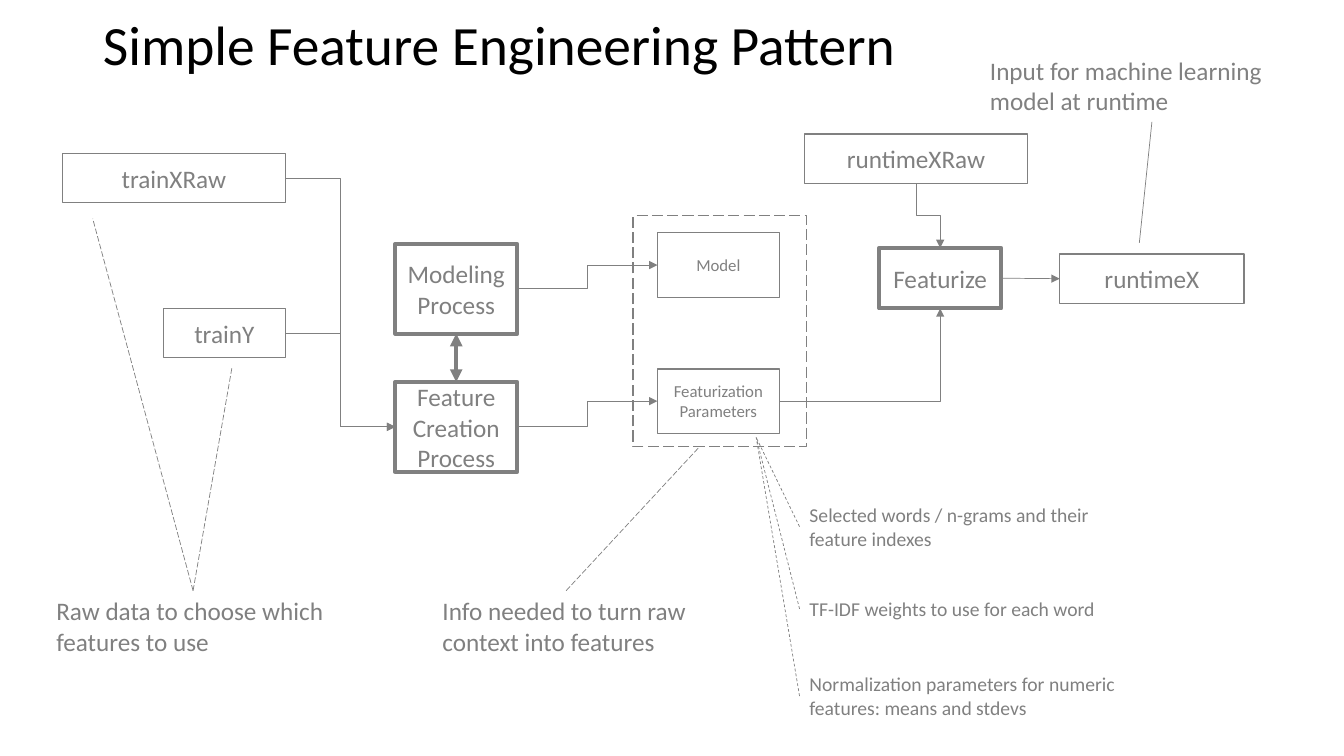
from lxml import etree
from pptx import Presentation
from pptx.dml.color import RGBColor
from pptx.enum.dml import MSO_LINE
from pptx.enum.shapes import MSO_CONNECTOR, MSO_SHAPE
from pptx.enum.text import MSO_ANCHOR, MSO_AUTO_SIZE, PP_ALIGN
from pptx.oxml.ns import qn
from pptx.util import Inches, Pt

GRAY, BLACK = "808080", "000000"
RECT = MSO_SHAPE.RECTANGLE
BENT, LINE = MSO_CONNECTOR.ELBOW, MSO_CONNECTOR.STRAIGHT
DASH, LONG = MSO_LINE.DASH, MSO_LINE.LONG_DASH
MIDDLE, TOP_EDGE = MSO_ANCHOR.MIDDLE, MSO_ANCHOR.TOP
LEFT_TEXT, CENTER = PP_ALIGN.LEFT, PP_ALIGN.CENTER
FIXED, GROW = MSO_AUTO_SIZE.NONE, MSO_AUTO_SIZE.SHAPE_TO_FIT_TEXT
TOP, LEFT, BOTTOM, RIGHT = range(4)
STEP_W, DATA_W, DATA_H = 1.21, 2.21, 0.49


def color(code):
    """Turn a hex string into a color."""
    return RGBColor.from_string(code)


def write(shape, text, size=18, code=GRAY, align=CENTER, anchor=MIDDLE, fit=FIXED, space=None):
    """Put formatted text into a shape."""
    frame = shape.text_frame
    frame.text = text
    frame.word_wrap = True
    frame.auto_size = fit
    frame.vertical_anchor = anchor
    for para in frame.paragraphs:
        para.alignment = align
        para.line_spacing = space
        for run in para.runs:
            run.font.name = "Calibri"
            run.font.size = Pt(size)
            run.font.color.rgb = color(code)


def stroke(shape, width, dash=None):
    """Format the line of a shape or connector."""
    shape.line.color.rgb = color(GRAY)
    shape.line.width = Pt(width)
    if dash is not None:
        shape.line.dash_style = dash


def block(slide, box, text="", size=18, width=1, dash=None):
    """Draw an outlined rectangle with a centered label."""
    shape = slide.shapes.add_shape(RECT, *map(Inches, box))
    shape.shadow.inherit = False
    shape.fill.background()
    stroke(shape, width, dash)
    if text:
        write(shape, text, size)
    return shape


def note(slide, box, text, size=18):
    """Add a free text note."""
    shape = slide.shapes.add_textbox(*map(Inches, box))
    write(shape, text, size, align=LEFT_TEXT, anchor=TOP_EDGE, fit=GROW)
    return shape


def link(slide, kind, start, end, width=0.5, dash=None, tips=()):
    """Join two ends, each a point or a shape with its side."""
    wire = slide.shapes.add_connector(kind, 0, 0, 0, 0)
    if isinstance(start[0], (int, float)):
        wire.begin_x, wire.begin_y = map(Inches, start)
    else:
        wire.begin_connect(*start)
    if isinstance(end[0], (int, float)):
        wire.end_x, wire.end_y = map(Inches, end)
    else:
        wire.end_connect(*end)
    stroke(wire, width, dash)
    for tip in tips:
        etree.SubElement(wire.line._get_or_add_ln(), qn(f"a:{tip}"), type="triangle")
    etree.SubElement(wire._element.spPr, qn("a:effectLst"))
    return wire


def arrow(slide, start, end, kind=BENT):
    """Draw a thin arrow between two blocks."""
    return link(slide, kind, start, end, tips=("tailEnd",))


def drop(slide, start, end):
    """Draw an elbow arrow that leaves and arrives vertically."""
    wire = arrow(slide, start, end)
    wide, high = wire.width, wire.height
    left = wire.left + (wide - high) // 2
    top = wire.top + (high - wide) // 2
    wire.left, wire.top, wire.width, wire.height = left, top, high, wide
    form = wire._element.spPr.find(qn("a:xfrm"))
    form.set("rot", "16200000")
    form.set("flipH", "1")


def heading(slide, box):
    """Place the slide title."""
    title = slide.shapes.title
    title.left, title.top, title.width, title.height = map(Inches, box)
    write(title, "Simple Feature Engineering Pattern", 39.6, BLACK, LEFT_TEXT, space=0.9)


def train(slide, x, y):
    """Place the training data and return its two blocks."""
    raw = block(slide, (x, y, DATA_W, DATA_H), "trainXRaw")
    label = block(slide, (x + DATA_W - STEP_W, y + 1.54, STEP_W, DATA_H), "trainY")
    info = note(slide, (x - 0.16, y + 4.34, 2.91, 0.71), "Raw data to choose which features to use")
    for end in ((x + 0.3, y + 0.65), (x + 1.68, y + 2.13)):
        link(slide, LINE, (info, TOP), end, dash=LONG)
    return raw, label


def steps(slide, x, y):
    """Place the two training processes and return them."""
    names = "Modeling\nProcess", "Feature Creation\nProcess"
    model, create = [block(slide, (x, y + 1.37 * i, STEP_W, 0.89), name, width=3)
                     for i, name in enumerate(names)]
    link(slide, LINE, (create, TOP), (model, BOTTOM), 3, tips=("headEnd", "tailEnd"))
    return model, create


def output(slide, x, y, wide, high):
    """Place the dashed group of results and return its blocks."""
    block(slide, (x, y, wide, high), dash=LONG)
    names = "Model", "Featurization Parameters"
    parts = [block(slide, (x + 0.24, y + 0.17 + 1.35 * i, STEP_W, 0.64), name, 12)
             for i, name in enumerate(names)]
    info = note(slide, (x - 1.99, y + 3.72, 2.65, 0.71), "Info needed to turn raw context into features")
    link(slide, LINE, (info, TOP), (x + 0.66, y + high), dash=LONG)
    return parts


def runtime(slide, x, y):
    """Place the runtime chain and return the featurize block."""
    raw = block(slide, (x, y, DATA_W, DATA_H), "runtimeXRaw")
    step = block(slide, (x + 0.74, y + 1.13, STEP_W, 0.6), "Featurize", width=3)
    ready = block(slide, (x + 2.53, y + 1.19, 1.83, DATA_H), "runtimeX")
    drop(slide, (raw, BOTTOM), (step, TOP))
    arrow(slide, (step, RIGHT), (ready, LEFT), LINE)
    info = note(slide, (x + 1.74, y - 0.83, 3.41, 0.71), "Input for machine learning model at runtime")
    link(slide, LINE, (x + 3.32, y + 1.08), (info, BOTTOM))
    return step


def details(slide, x, y):
    """Place the parameter notes and their dashed leaders."""
    rows = ((0, 0.57, "Selected words / n-grams and their feature indexes"),
            (0.93, 0.34, "TF-IDF weights to use for each word"),
            (1.68, 0.57, "Normalization parameters for numeric features: means and stdevs"))
    for down, high, text in rows:
        item = note(slide, (x, y + down, 3.41, high), text, 14)
        link(slide, LINE, (item, LEFT), (x - 0.43, y - 0.6), dash=DASH)


def flow(slide):
    """Place all regions and connect them."""
    heading(slide, (0.92, 0.13, 11.5, 0.69))
    inputs = train(slide, 0.62, 1.52)
    model, create = steps(slide, 3.92, 2.42)
    result, params = output(slide, 6.28, 2.14, 1.72, 2.29)
    step = runtime(slide, 7.98, 1.33)
    details(slide, 7.93, 4.94)
    for data in inputs:
        arrow(slide, (data, RIGHT), (create, LEFT))
    arrow(slide, (model, RIGHT), (result, LEFT))
    arrow(slide, (create, RIGHT), (params, LEFT))
    corner = arrow(slide, (params, RIGHT), (step, BOTTOM))
    corner._element.spPr.find(qn("a:prstGeom")).set("prst", "bentConnector2")


def main():
    """Build and save the deck."""
    deck = Presentation()
    deck.slide_width, deck.slide_height = Inches(13.33), Inches(7.5)
    flow(deck.slides.add_slide(deck.slide_layouts[5]))
    deck.save("out.pptx")


if __name__ == "__main__":
    main()
